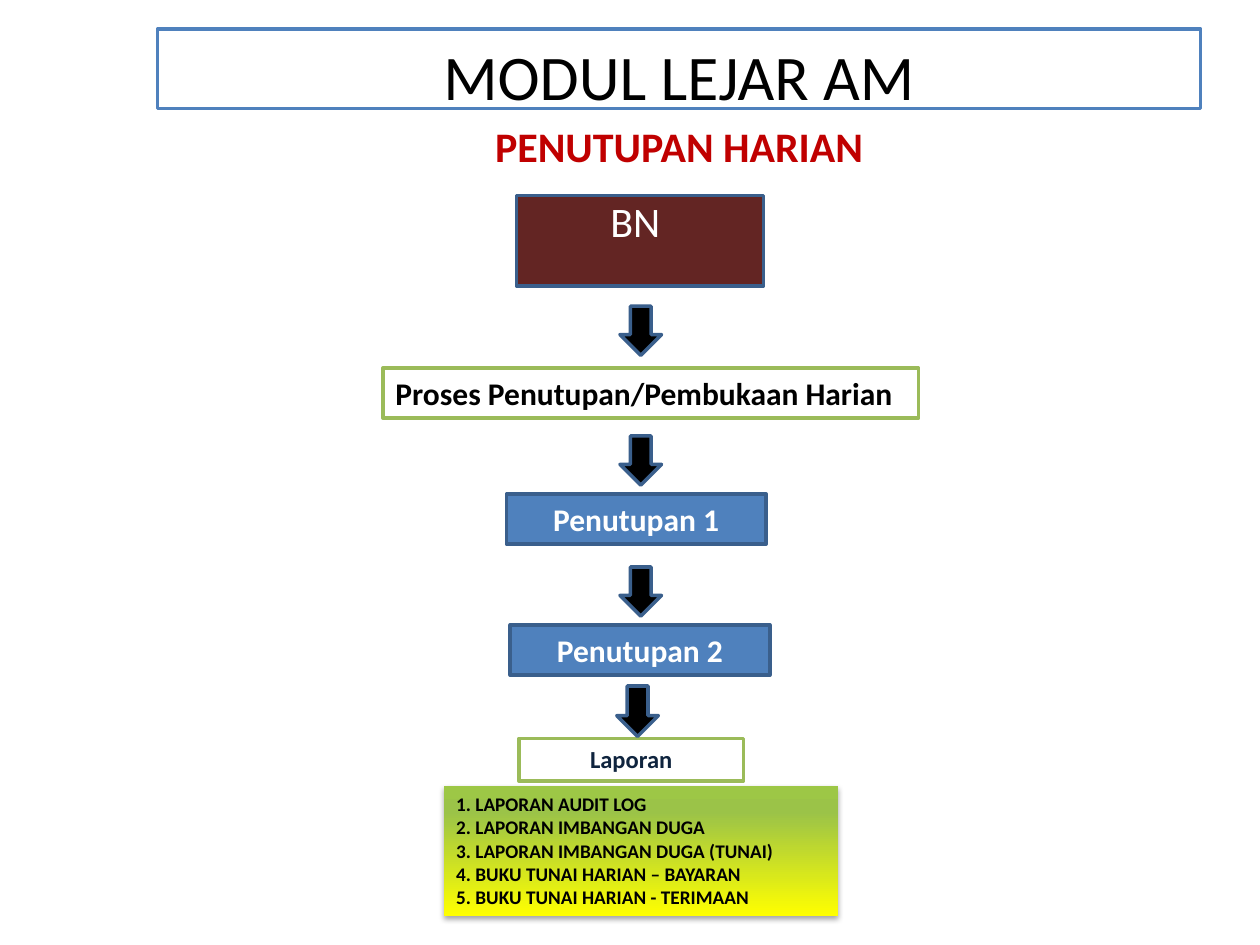
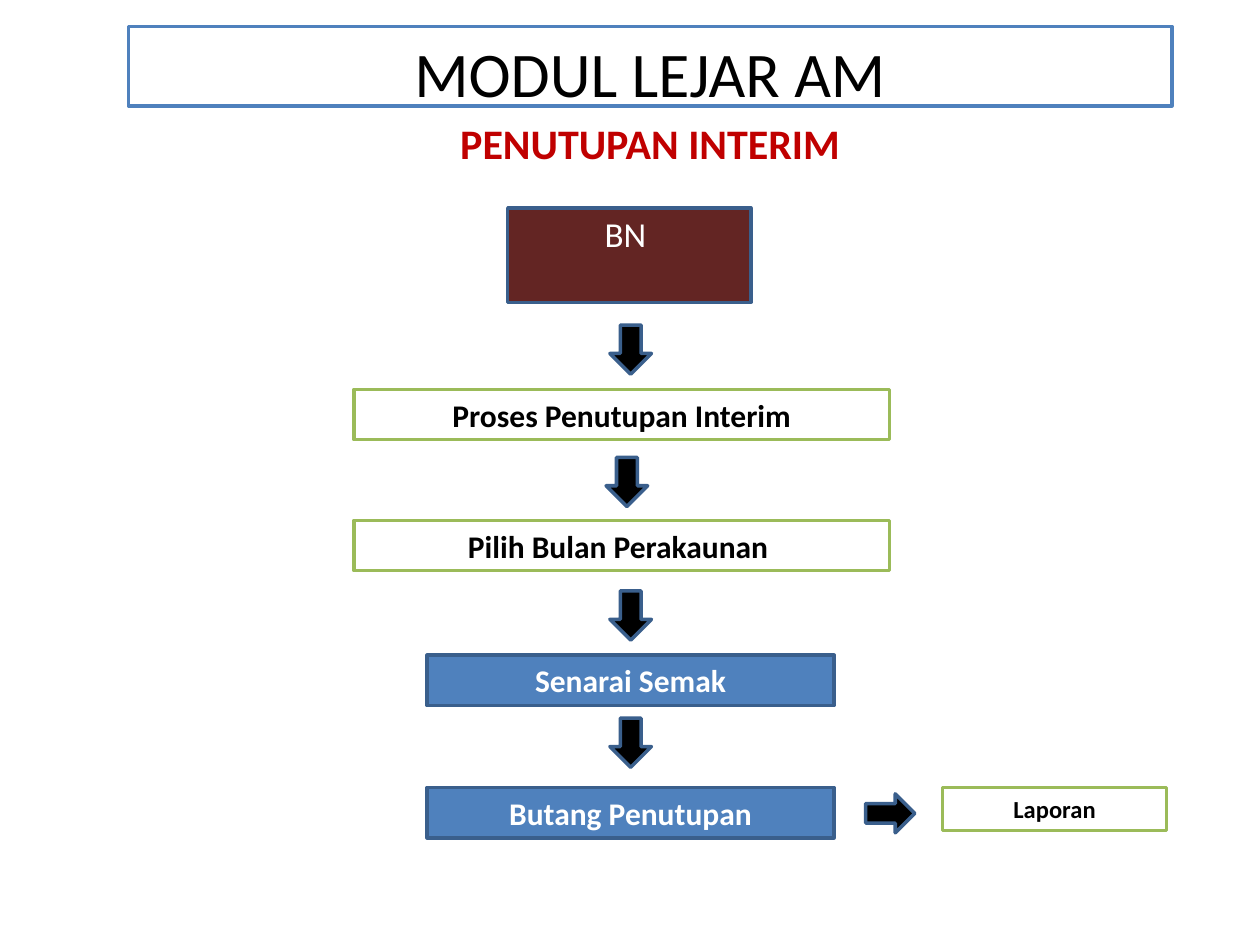
"""Build two flow-chart slides on daily and interim closing."""
from lxml.etree import fromstring
from pptx import Presentation
from pptx.dml.color import RGBColor
from pptx.enum.shapes import MSO_SHAPE
from pptx.enum.text import MSO_ANCHOR, MSO_AUTO_SIZE, PP_ALIGN
from pptx.util import Inches, Pt

WHITE = RGBColor(0xFF, 0xFF, 0xFF)
BLACK = RGBColor(0x00, 0x00, 0x00)
RED = RGBColor(0xC0, 0x00, 0x00)
MAROON = RGBColor(0x63, 0x25, 0x23)
BLUE = RGBColor(0x4F, 0x81, 0xBD)
DARK_BLUE = RGBColor(0x3A, 0x5F, 0x8C)
NAVY = RGBColor(0x0F, 0x24, 0x3E)
GREEN = RGBColor(0x9B, 0xBB, 0x59)
LIME = RGBColor(0x9B, 0xC3, 0x48)
LIGHT_LIME = RGBColor(0x9D, 0xC7, 0x46)
YELLOW = RGBColor(0xFF, 0xFF, 0x00)

NAMESPACE = 'xmlns:a="http://schemas.openxmlformats.org/drawingml/2006/main"'
REPORT_STOPS = [(0, YELLOW), (80, LIME), (100, LIGHT_LIME)]
REPORTS = [
    "1. LAPORAN AUDIT LOG",
    "2. LAPORAN IMBANGAN DUGA",
    "3. LAPORAN IMBANGAN DUGA (TUNAI)",
    "4. BUKU TUNAI HARIAN – BAYARAN",
    "5. BUKU TUNAI HARIAN - TERIMAAN",
]
TITLE_AND_BODY, TITLE_ONLY = 1, 5


class FlowDeck:
    """Hold the shared style and the current slide."""

    font_name = "Calibri"
    line_width = Pt(2)

    def __init__(self):
        self.presentation = Presentation()
        self.presentation.slide_width = Inches(10)
        self.presentation.slide_height = Inches(7.5)
        self.slide = None

    def new_slide(self, layout):
        layouts = self.presentation.slide_layouts
        self.slide = self.presentation.slides.add_slide(layouts[layout])

    def place(self, shape, left, top, width, height):
        position = {"left": left, "top": top, "width": width, "height": height}
        for name, value in position.items():
            setattr(shape, name, Inches(value))

    def paint(self, shape, fill, line):
        shape.fill.solid()
        shape.fill.fore_color.rgb = fill
        shape.line.color.rgb = line
        shape.line.width = self.line_width

    def set_text(self, shape, lines, size, color, bold=True,
                 align=PP_ALIGN.CENTER, margin_top=0.05):
        frame = shape.text_frame
        frame_format = {
            "word_wrap": True,
            "auto_size": MSO_AUTO_SIZE.NONE,
            "vertical_anchor": MSO_ANCHOR.TOP,
            "margin_top": Inches(margin_top),
        }
        for name, value in frame_format.items():
            setattr(frame, name, value)
        frame.text = "\n".join(lines)
        font_format = {"name": self.font_name, "size": Pt(size), "bold": bold}
        for paragraph in frame.paragraphs:
            paragraph.alignment = align
            paragraph.space_before = Pt(0)
            font = paragraph.runs[0].font
            for name, value in font_format.items():
                setattr(font, name, value)
            font.color.rgb = color

    def title(self, text, left, top):
        shape = self.slide.shapes.title
        self.place(shape, left, top, 8.28, 0.63)
        self.paint(shape, WHITE, BLUE)
        self.set_text(shape, [text], 36.3, BLACK, bold=False, margin_top=0.06)

    def subtitle(self, text, left, top, width):
        shape = self.slide.shapes.add_textbox(
            Inches(left), Inches(top), Inches(width), Inches(0.5))
        self.set_text(shape, [text], 24, RED)

    def preset(self, kind, left, top, width, height, fill, line):
        shape = self.slide.shapes.add_shape(
            kind, Inches(left), Inches(top), Inches(width), Inches(height))
        shape.shadow.inherit = False
        self.paint(shape, fill, line)
        return shape

    def start(self, left, top, width, height, size, margin_top):
        shape = self.preset(MSO_SHAPE.RECTANGLE, left, top, width, height,
                            MAROON, DARK_BLUE)
        self.set_text(shape, ["BN "], size, WHITE, bold=False,
                      margin_top=margin_top)

    def process(self, text, left, top, align=PP_ALIGN.CENTER):
        shape = self.preset(MSO_SHAPE.RECTANGLE, left, top, 4.25, 0.4, WHITE, GREEN)
        self.set_text(shape, [text], 18, BLACK, align=align)

    def step(self, text, left, top, width):
        shape = self.preset(MSO_SHAPE.RECTANGLE, left, top, width, 0.4,
                            BLUE, DARK_BLUE)
        self.set_text(shape, [text], 18, WHITE)

    def report(self, left, top, color):
        shape = self.preset(MSO_SHAPE.RECTANGLE, left, top, 1.78, 0.34, WHITE, GREEN)
        self.set_text(shape, ["Laporan"], 14, color)

    def arrow(self, left, top, width=0.39, height=0.33, rotation=90):
        shape = self.preset(MSO_SHAPE.RIGHT_ARROW, left, top, width, height,
                            BLACK, DARK_BLUE)
        shape.rotation = rotation

    def report_list(self, lines, left, top, width, height):
        shape = self.slide.placeholders[1]
        self.place(shape, left, top, width, height)
        self.set_text(shape, lines, 11, BLACK, align=PP_ALIGN.LEFT)
        for paragraph in shape.text_frame.paragraphs:
            properties = paragraph._p.get_or_add_pPr()
            properties.set("marL", "0")
            properties.set("indent", "0")
            properties.append(fromstring(f"<a:buNone {NAMESPACE}/>"))
        stops = "".join(
            f'<a:gs pos="{position * 1000}"><a:srgbClr val="{color}"/></a:gs>'
            for position, color in REPORT_STOPS)
        gradient = (f'<a:gradFill {NAMESPACE} rotWithShape="1"><a:gsLst>{stops}'
                    '</a:gsLst><a:lin ang="16200000" scaled="0"/></a:gradFill>')
        shadow = (f'<a:effectLst {NAMESPACE}><a:outerShdw blurRad="{Pt(3.1)}" '
                  f'dist="{Pt(1.8)}" dir="5400000" rotWithShape="0">'
                  f'<a:srgbClr val="{BLACK}"><a:alpha val="35000"/></a:srgbClr>'
                  '</a:outerShdw></a:effectLst>')
        for markup in (gradient, shadow):
            shape._element.spPr.append(fromstring(markup))


def daily_closing(deck):
    """Draw the daily closing flow."""
    deck.new_slide(TITLE_AND_BODY)
    deck.title("MODUL LEJAR AM", 1.25, 0.23)
    deck.subtitle("PENUTUPAN HARIAN", 3.35, 0.91, 4.08)
    deck.start(4.1, 1.55, 1.96, 0.72, 24, 0)
    deck.process("Proses Penutupan/Pembukaan Harian", 3.04, 2.92, PP_ALIGN.LEFT)
    deck.step("Penutupan 1", 4.02, 3.92, 2.06)
    deck.step("Penutupan 2", 4.05, 4.96, 2.06)
    deck.report(4.12, 5.86, NAVY)
    deck.report_list(REPORTS, 3.52, 6.24, 3.13, 1.03)
    for top in (2.46, 3.49, 4.53):
        deck.arrow(4.89, top)
    deck.arrow(4.86, 5.48, width=0.4)


def interim_closing(deck):
    """Draw the interim closing flow."""
    deck.new_slide(TITLE_ONLY)
    deck.title("MODUL LEJAR AM", 1.02, 0.21)
    deck.subtitle("PENUTUPAN INTERIM", 3.27, 0.88, 3.78)
    deck.start(4.03, 1.65, 1.93, 0.75, 20, 0.04)
    deck.process("Proses Penutupan Interim", 2.81, 3.09)
    deck.process("Pilih Bulan Perakaunan ", 2.81, 4.13)
    deck.step("Senarai Semak", 3.39, 5.2, 3.23)
    deck.step("Butang Penutupan", 3.39, 6.25, 3.23)
    for left, top in ((4.81, 2.61), (4.78, 3.66), (4.81, 4.72), (4.81, 5.73)):
        deck.arrow(left, top)
    deck.report(7.48, 6.25, BLACK)
    deck.arrow(6.87, 6.3, height=0.31, rotation=0)


def main():
    """Build and save both slides."""
    deck = FlowDeck()
    daily_closing(deck)
    interim_closing(deck)
    deck.presentation.save("out.pptx")


if __name__ == "__main__":
    main()
